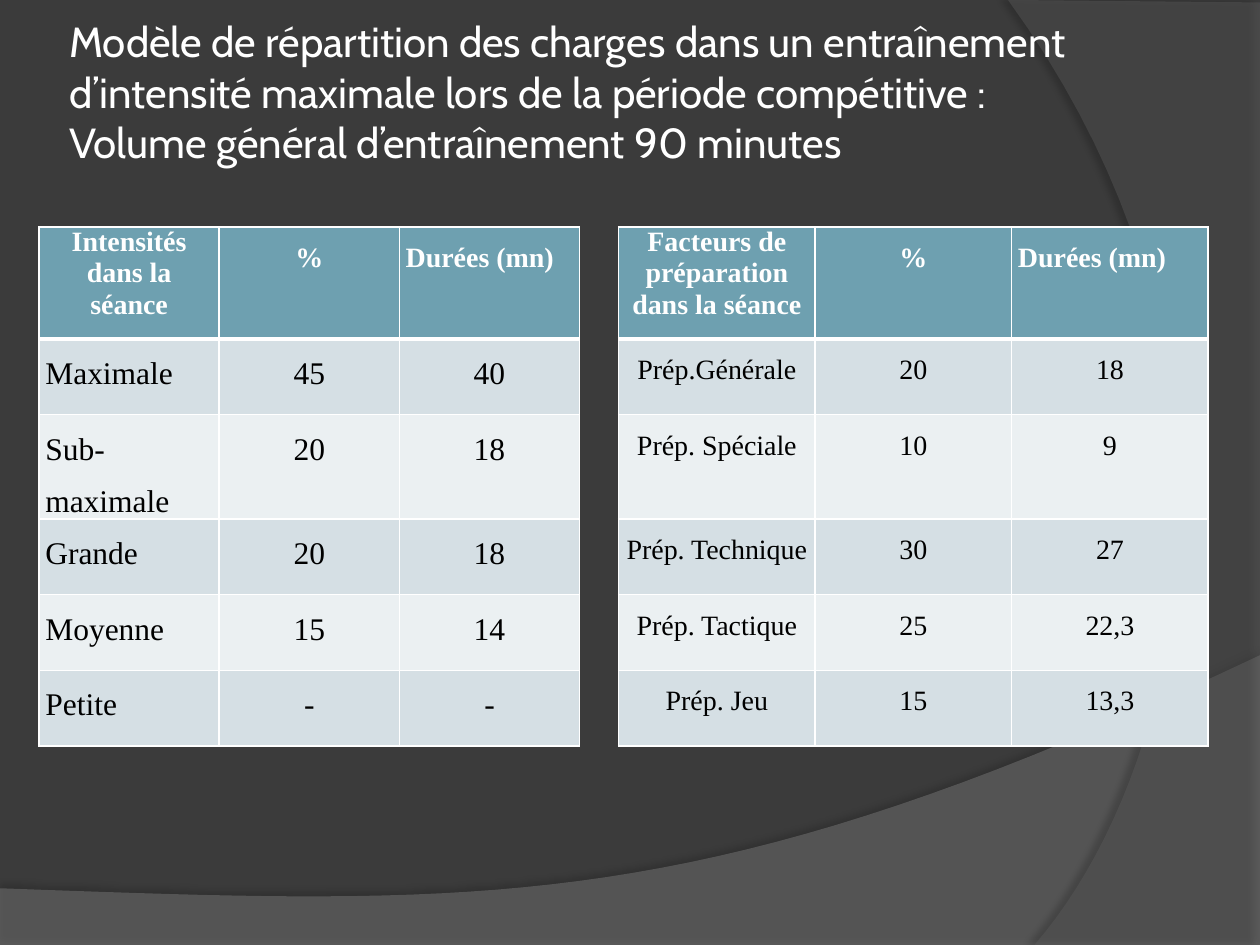
from lxml.etree import SubElement
from pptx import Presentation
from pptx.dml.color import RGBColor
from pptx.enum.text import MSO_ANCHOR as Anchor, MSO_AUTO_SIZE as AutoSize, PP_ALIGN as Align
from pptx.oxml import parse_xml
from pptx.oxml.ns import nsdecls, qn
from pptx.util import Inches, Pt

BACKGROUND = RGBColor(0x3B, 0x3B, 0x3B)
WAVE = RGBColor(0x7F, 0x7F, 0x7F)
ARC = RGBColor(0x5E, 0x5E, 0x5E)
WHITE = RGBColor(0xFF, 0xFF, 0xFF)
BLACK = RGBColor(0, 0, 0)
HEADER = RGBColor(0x6E, 0xA0, 0xB0)
BANDS = (RGBColor(0xD5, 0xDF, 0xE4), RGBColor(0xEB, 0xF0, 0xF2))

TITLE_FONT, TABLE_FONT = "Cabin", "Times New Roman"
NO_STYLE = "{2D5ABB26-0587-4C30-8999-92F81FD0307C}"
TITLE = ("Modèle de répartition des charges dans un entraînement d’intensité maximale "
         "lors de la période compétitive\u00a0: Volume général d’entraînement 90 minutes")

GAP = 3  # empty column between the two halves of the table
COLUMN_WIDTHS = [1.43] * 3 + [0.31] + [1.56] * 3
ROW_HEIGHTS = [0.89] + [0.6] * 5
ROWS = [
    ["Intensités dans la séance", "%", "Durées (mn)", "",
     "Facteurs de préparation dans la séance", "%", "Durées (mn)"],
    ["Maximale", "45", "40", "", "Prép.Générale", "20", "18"],
    ["Sub-maximale", "20", "18", "", "Prép. Spéciale", "10", "9"],
    ["Grande", "20", "18", "", "Prép. Technique", "30", "27"],
    ["Moyenne", "15", "14", "", "Prép. Tactique", "25", "22,3"],
    ["Petite", "-", "-", "", "Prép. Jeu", "15", "13,3"],
]


def bezier(start, control1, control2, end, steps=40):
    """Points along a cubic curve, without its start."""
    points = []
    for step in range(1, steps + 1):
        t = step / steps
        weights = ((1 - t) ** 3, 3 * t * (1 - t) ** 2, 3 * t * t * (1 - t), t ** 3)
        points.append(tuple(sum(w * p[axis] for w, p in zip(weights, (start, control1, control2, end)))
                            for axis in (0, 1)))
    return points


def add_backdrop(slide, points, color, opacity, shadow_opacity, distance, direction):
    """Translucent outline with a soft shadow; opacities in percent, direction in degrees."""
    corners = [(Inches(x), Inches(y)) for x, y in points]
    builder = slide.shapes.build_freeform(*corners[0], scale=1.0)
    builder.add_line_segments(corners[1:], close=True)
    shape = builder.convert_to_shape()
    shape.fill.solid()
    shape.fill.fore_color.rgb = color
    shape.line.fill.background()
    properties = shape._element.spPr
    SubElement(properties.find(".//" + qn("a:solidFill"))[0], qn("a:alpha"), val=str(opacity * 1000))
    properties.append(parse_xml(
        f'<a:effectLst {nsdecls("a")}><a:outerShdw blurRad="{Pt(4)}" dist="{Pt(distance)}" '
        f'dir="{direction * 60000}" algn="ctr" rotWithShape="0"><a:srgbClr val="{BLACK}">'
        f'<a:alpha val="{shadow_opacity * 1000}"/></a:srgbClr></a:outerShdw></a:effectLst>'))


def add_run(para, text, font, size, color, bold=False):
    span = para.add_run()
    span.text = text
    span.font.name, span.font.size, span.font.bold = font, Pt(size), bold
    span.font.color.rgb = color


def set_title(slide):
    title = slide.shapes.title
    title.left, title.top, title.width, title.height = map(Inches, (0.5, 0.3, 8.17, 1.25))
    frame = title.text_frame
    frame.auto_size, frame.word_wrap = AutoSize.NONE, True
    frame.vertical_anchor = Anchor.MIDDLE
    frame.margin_left = frame.margin_right = frame.margin_top = Inches(0.05)
    frame.margin_bottom = Inches(0.45)  # lifts the three lines above the middle
    para = frame.paragraphs[0]
    para.alignment = Align.LEFT
    add_run(para, TITLE, TITLE_FONT, 24, WHITE)
    slide.shapes._spTree.append(title._element)  # in front of the backdrop


def set_borders(cell, widths):
    """White borders; widths maps sides (L, R, T, B) to points."""
    properties = cell._tc.get_or_add_tcPr()
    for side in "LRTB":
        if side in widths:
            line = SubElement(properties, qn(f"a:ln{side}"), w=str(Pt(widths[side])))
            fill = SubElement(line, qn("a:solidFill"))
            SubElement(fill, qn("a:srgbClr"), val=str(WHITE))


def fill_cell(cell, text, row, column):
    is_header = row == 0
    widths = {"L": 1, "R": 1, "T": 3 if row == 1 else 1, "B": 3 if is_header else 1}
    if column == GAP + 1:
        del widths["L"]
    set_borders(cell, widths)
    cell.fill.solid()
    cell.fill.fore_color.rgb = HEADER if is_header else BANDS[(row - 1) % 2]
    cell.margin_left = cell.margin_right = Inches(0.05)
    cell.margin_top = cell.margin_bottom = 0
    para = cell.text_frame.paragraphs[0]
    at_left = text == "Durées (mn)" or (column == 0 and not is_header)
    para.alignment = Align.LEFT if at_left else Align.CENTER
    if not (is_header and column in (0, GAP + 1)):
        para.line_spacing = 1.5
    size = 16 if is_header or column > GAP else 18
    add_run(para, text, TABLE_FONT, size, WHITE if is_header else BLACK, is_header)


def add_load_table(slide):
    frame = slide.shapes.add_table(len(ROWS), len(COLUMN_WIDTHS), Inches(0.31), Inches(1.8),
                                   Inches(sum(COLUMN_WIDTHS)), Inches(sum(ROW_HEIGHTS)))
    table = frame.table
    table._tbl.tblPr.find(qn("a:tableStyleId")).text = NO_STYLE
    for column, width in zip(table.columns, COLUMN_WIDTHS):
        column.width = Inches(width)
    for row, height in zip(table.rows, ROW_HEIGHTS):
        row.height = Inches(height)
    for row, texts in enumerate(ROWS):
        for column, text in enumerate(texts):
            cell = table.cell(row, column)
            if column == GAP:
                set_borders(cell, {"L": 1})
                cell.fill.background()
            else:
                fill_cell(cell, text, row, column)


def main():
    deck = Presentation()
    deck.slide_width, deck.slide_height = Inches(10), Inches(7.5)
    slide = deck.slides.add_slide(deck.slide_layouts[5])
    slide.background.fill.solid()
    slide.background.fill.fore_color.rgb = BACKGROUND
    wave = [(0, 7.05), (0, 7.51), (10, 7.51), (10, 5.2)]
    wave += bezier(wave[-1], (5.59, 7.29), (3.91, 7.19), wave[0])
    arc = [(10, 0.02), (10, 7.5), (8.21, 7.5)]
    arc += bezier(arc[-1], (9.35, 6.19), (10.18, 3), (8, 0))
    add_backdrop(slide, wave, WAVE, 45, 35, 3.5, 270)
    add_backdrop(slide, arc, ARC, 40, 45, 4, 180)
    set_title(slide)
    add_load_table(slide)
    deck.save("out.pptx")


if __name__ == "__main__":
    main()
